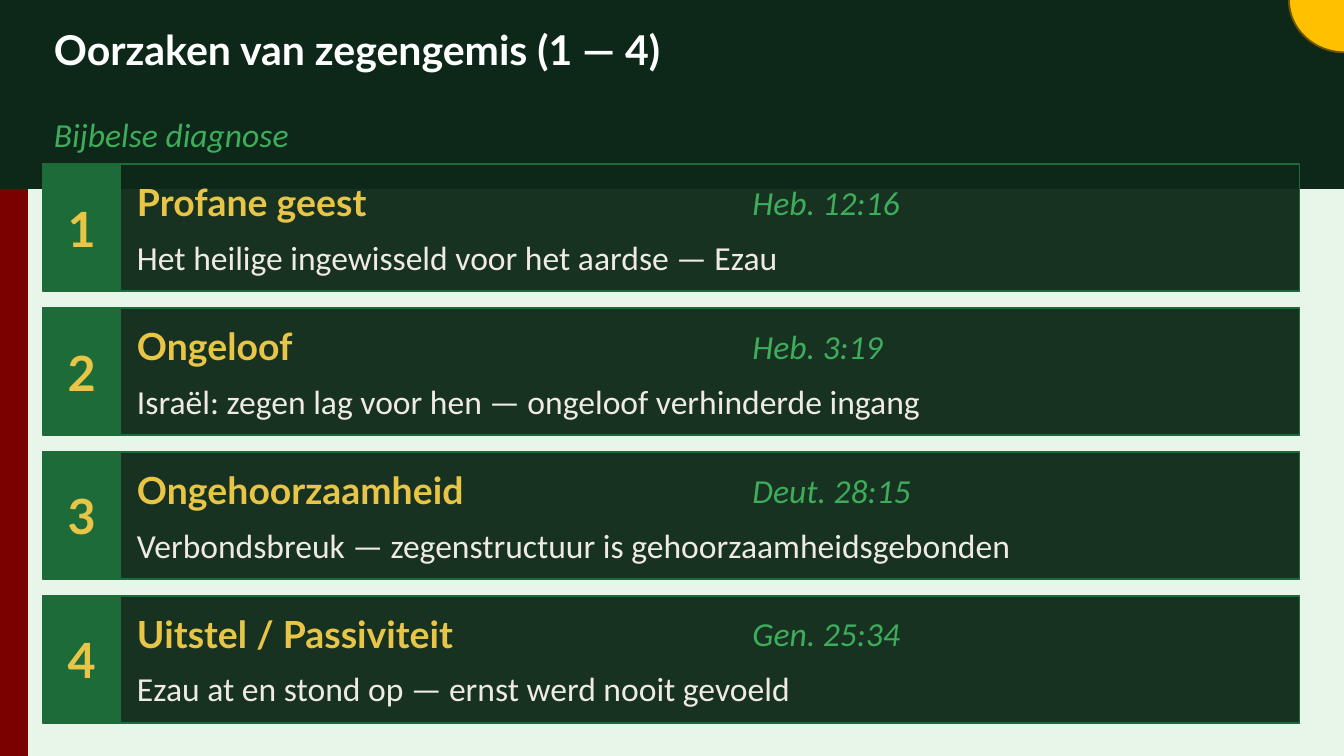
from dataclasses import dataclass

from lxml import etree
from pptx import Presentation
from pptx.dml.color import RGBColor
from pptx.enum.shapes import MSO_SHAPE
from pptx.enum.text import MSO_ANCHOR, PP_ALIGN
from pptx.oxml.ns import qn
from pptx.slide import Slide
from pptx.util import Cm, Pt

RECTANGLE, OVAL = MSO_SHAPE.RECTANGLE, MSO_SHAPE.OVAL
LEFT, CENTER = PP_ALIGN.LEFT, PP_ALIGN.CENTER
MIDDLE = MSO_ANCHOR.MIDDLE

DARK_GREEN, GREEN, LIGHT_GREEN = "0D2818", "1E6B3A", "3DAD5C"
MINT, RED, GOLD, CREAM, WHITE = "E8F5E9", "7B0000", "E8C547", "F0EBE0", "FFFFFF"
AMBER, BROWN = "FFC000", "705400"

TITLE = {"name": "Lato", "size": Pt(22), "bold": True, "color": WHITE}
SUBTITLE = {"name": "Calibri", "size": Pt(18), "italic": True, "color": LIGHT_GREEN}
NUMBER = {"name": "Lato", "size": Pt(26), "bold": True, "color": GOLD}
HEADING = {"name": "Lato", "size": Pt(20), "bold": True, "color": GOLD}
BODY = {"name": "Calibri", "size": Pt(18), "color": CREAM}

PAGE_WIDTH, PAGE_HEIGHT = 25.4, 14.29
CARD_LEFT, CARD_TOP, CARD_WIDTH, CARD_HEIGHT = 0.81, 3.1, 23.75, 2.41
CARD_PITCH = 2.72
BADGE_WIDTH = 1.47
TEXT_LEFT, VERSE_LEFT = 2.59, 14.22


@dataclass(frozen=True)
class Area:
    """Position and size in centimetres."""
    left: float
    top: float
    width: float
    height: float

    def lengths(self) -> tuple[Cm, Cm, Cm, Cm]:
        return Cm(self.left), Cm(self.top), Cm(self.width), Cm(self.height)


@dataclass(frozen=True)
class Cause:
    heading: str
    verse: str
    explanation: str


CAUSES = [
    Cause("Profane geest", "Heb. 12:16",
          "Het heilige ingewisseld voor het aardse — Ezau"),
    Cause("Ongeloof", "Heb. 3:19",
          "Israël: zegen lag voor hen — ongeloof verhinderde ingang"),
    Cause("Ongehoorzaamheid", "Deut. 28:15",
          "Verbondsbreuk — zegenstructuur is gehoorzaamheidsgebonden"),
    Cause("Uitstel / Passiviteit", "Gen. 25:34",
          "Ezau at en stond op — ernst werd nooit gevoeld"),
]


def rgb(value: str) -> RGBColor:
    return RGBColor.from_string(value)


def add_panel(page: Slide, area: Area, fill: str, line: str,
              kind: MSO_SHAPE = RECTANGLE, opacity: int = 100) -> None:
    """Draw a filled shape; opacity is a percentage."""
    panel = page.shapes.add_shape(kind, *area.lengths())
    panel.shadow.inherit = False
    panel.fill.solid()
    panel.fill.fore_color.rgb = rgb(fill)
    panel.line.color.rgb = rgb(line)
    panel.line.width = Pt(1)
    if opacity < 100:
        color = panel.fill._xPr.find(f"{qn('a:solidFill')}/{qn('a:srgbClr')}")
        etree.SubElement(color, qn("a:alpha"), val=str(opacity * 1000))


def add_text(page: Slide, area: Area, text: str, style: dict,
             align: PP_ALIGN = LEFT) -> None:
    frame = page.shapes.add_textbox(*area.lengths()).text_frame
    frame.word_wrap = True
    frame.vertical_anchor = MIDDLE
    for side in ("left", "top", "right", "bottom"):
        setattr(frame, f"margin_{side}", 0)
    para = frame.paragraphs[0]
    para.alignment = align
    span = para.add_run()
    span.text = text
    for name, value in style.items():
        if name == "color":
            span.font.color.rgb = rgb(value)
        else:
            setattr(span.font, name, value)


def add_card(page: Slide, index: int, cause: Cause) -> None:
    top = CARD_TOP + index * CARD_PITCH
    badge = Area(CARD_LEFT, top, BADGE_WIDTH, CARD_HEIGHT)
    add_panel(page, Area(CARD_LEFT, top, CARD_WIDTH, CARD_HEIGHT),
              DARK_GREEN, GREEN, opacity=95)
    add_panel(page, badge, GREEN, GREEN)
    add_text(page, badge, str(index + 1), NUMBER, CENTER)
    add_text(page, Area(TEXT_LEFT, top + 0.18, 11.43, 1.07), cause.heading, HEADING)
    add_text(page, Area(VERSE_LEFT, top + 0.18, 6.35, 1.07), cause.verse, SUBTITLE)
    add_text(page, Area(TEXT_LEFT, top + 1.27, 21.34, 0.97), cause.explanation, BODY)


def main() -> None:
    deck = Presentation()
    deck.slide_width, deck.slide_height = Cm(PAGE_WIDTH), Cm(PAGE_HEIGHT)
    page = deck.slides.add_slide(deck.slide_layouts[6])
    page.background.fill.solid()
    page.background.fill.fore_color.rgb = rgb(MINT)

    add_panel(page, Area(0, 0, 0.51, PAGE_HEIGHT), RED, RED)
    add_panel(page, Area(0, 0, PAGE_WIDTH, 3.56), DARK_GREEN, DARK_GREEN)
    add_text(page, Area(1.02, 0.2, 23.37, 1.47), "Oorzaken van zegengemis (1 — 4)", TITLE)
    add_text(page, Area(1.02, 1.83, 23.37, 1.4), "Bijbelse diagnose", SUBTITLE)
    for index, cause in enumerate(CAUSES):
        add_card(page, index, cause)
    add_panel(page, Area(24.36, -0.99, 2.11, 1.98), AMBER, BROWN, OVAL)

    deck.save("out.pptx")


if __name__ == "__main__":
    main()
